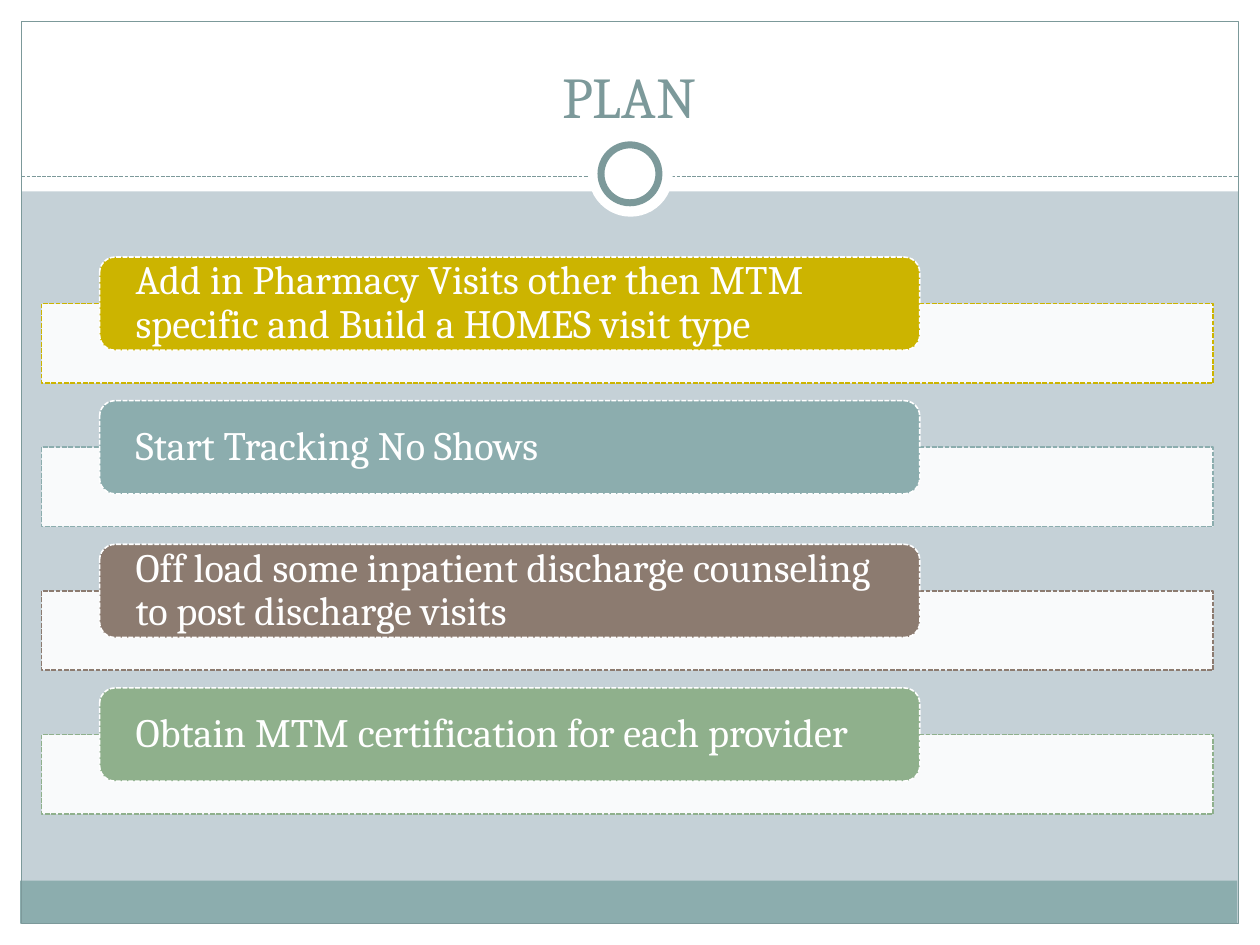
"""Build the PLAN slide: four coloured steps in a framed page."""
from lxml import etree
from pptx import Presentation
from pptx.dml.color import RGBColor
from pptx.enum.dml import MSO_LINE
from pptx.enum.shapes import MSO_CONNECTOR, MSO_SHAPE
from pptx.enum.text import MSO_ANCHOR, PP_ALIGN
from pptx.oxml.ns import qn
from pptx.util import Inches, Pt

RECT, ROUND, OVAL = MSO_SHAPE.RECTANGLE, MSO_SHAPE.ROUNDED_RECTANGLE, MSO_SHAPE.OVAL
STRAIGHT = MSO_CONNECTOR.STRAIGHT
DASH = MSO_LINE.SQUARE_DOT
BOTTOM, MIDDLE = MSO_ANCHOR.BOTTOM, MSO_ANCHOR.MIDDLE
LEFT, CENTER = PP_ALIGN.LEFT, PP_ALIGN.CENTER

WHITE = RGBColor(0xFF, 0xFF, 0xFF)
MIST = RGBColor(0xC5, 0xD1, 0xD7)
SLATE = RGBColor(0x7C, 0x99, 0x9A)
GOLD = RGBColor(0xCC, 0xB4, 0x00)
TEAL = RGBColor(0x8C, 0xAD, 0xAE)
BROWN = RGBColor(0x8C, 0x7B, 0x70)
GREEN = RGBColor(0x8F, 0xB0, 0x8C)
FONT = "Cambria"

deck = Presentation()
deck.slide_width, deck.slide_height = Inches(10), Inches(7.5)
slide = deck.slides.add_slide(deck.slide_layouts[6])
slide.background.fill.solid()
slide.background.fill.fore_color.rgb = MIST


def add_box(kind, box, fill=None, line=None, width=0.75, dash=None):
    shape = slide.shapes.add_shape(kind, *map(Inches, box))
    shape.shadow.inherit = False
    if fill is None:
        shape.fill.background()
    else:
        shape.fill.solid()
        shape.fill.fore_color.rgb = fill
    if line is None:
        shape.line.fill.background()
    else:
        shape.line.color.rgb = line
        shape.line.width = Pt(width)
        shape.line.dash_style = dash
    return shape


def set_text(shape, text, size, color, align, anchor):
    frame = shape.text_frame
    frame.word_wrap = True
    frame.vertical_anchor = anchor
    frame.text = text
    para = frame.paragraphs[0]
    para.alignment = align
    para.font.name, para.font.size = FONT, Pt(size)
    para.font.color.rgb = color
    return frame


for edge in [(0, 7.33, 10, 0.17), (0, 0, 10, 1.52), (0, 0, 0.17, 7.5), (9.83, 0, 0.17, 7.5)]:
    add_box(RECT, edge, WHITE)
add_box(RECT, (0.16, 6.99, 9.66, 0.34), TEAL)
add_box(RECT, (0.17, 0.17, 9.66, 7.16), line=SLATE)

rule = slide.shapes.add_connector(STRAIGHT, Inches(0.17), Inches(1.4), Inches(9.83), Inches(1.4))
rule.line.color.rgb = SLATE
rule.line.width = Pt(0.75)
rule.line.dash_style = DASH
etree.SubElement(rule.line._get_or_add_ln().getparent(), qn("a:effectLst"))

add_box(OVAL, (4.67, 1.05, 0.67, 0.67), WHITE)
add_box(OVAL, (4.77, 1.15, 0.46, 0.46), WHITE, SLATE, 4)

title = slide.shapes.add_textbox(Inches(0.33), Inches(0.25), Inches(9.33), Inches(0.83))
set_text(title, "PLAN", 33, SLATE, CENTER, BOTTOM)

steps = [
    ("Add in Pharmacy Visits other then MTM specific and Build a HOMES visit type", GOLD),
    ("Start Tracking No Shows", TEAL),
    ("Off load some inpatient discharge counseling to post discharge visits", BROWN),
    ("Obtain MTM certification for each provider", GREEN),
]
for row, (text, color) in enumerate(steps):
    top = 2.04 + 1.14 * row
    band = add_box(RECT, (0.33, top + 0.37, 9.3, 0.63), WHITE, color, 0.9, DASH)
    tint = band.fill._xPr.find(qn("a:solidFill"))[0]
    etree.SubElement(tint, qn("a:alpha"), val="90000")
    label = add_box(ROUND, (0.79, top, 6.51, 0.74), color, WHITE, 0.9, DASH)
    frame = set_text(label, text, 23, WHITE, LEFT, MIDDLE)
    frame.margin_left = frame.margin_right = Inches(0.25)
    frame.margin_top = frame.margin_bottom = 0
    frame.paragraphs[0].line_spacing = 0.9

deck.save("out.pptx")
